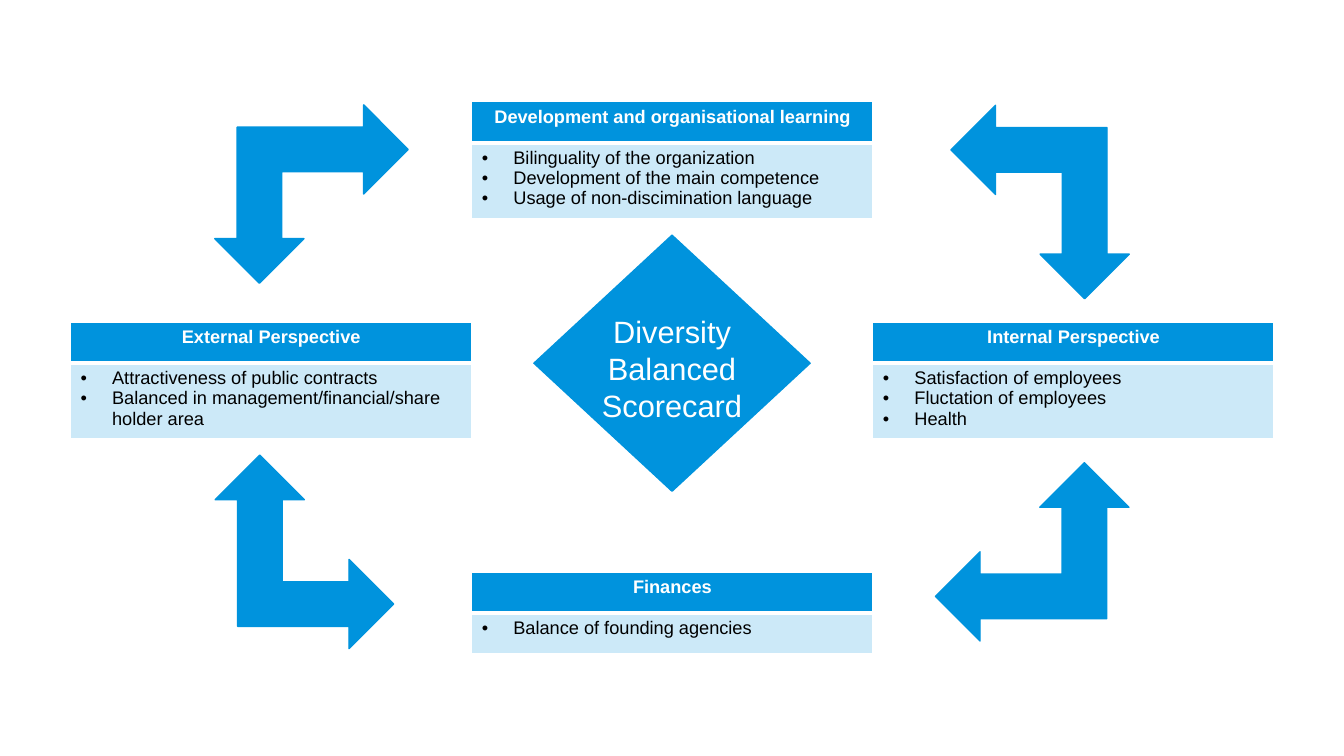
from lxml import etree
from pptx import Presentation
from pptx.dml.color import RGBColor
from pptx.enum.shapes import MSO_SHAPE as Shape
from pptx.enum.text import PP_ALIGN as Align
from pptx.oxml.ns import qn
from pptx.util import Pt

BLUE = RGBColor(0x00, 0x93, 0xDD)
WHITE = RGBColor(0xFF, 0xFF, 0xFF)
BLACK = RGBColor(0x00, 0x00, 0x00)
FONT = "Arial"

CARD_WIDTH, HEADER_HEIGHT = 286.5, 29.2
ARROW_WIDTH, ARROW_HEIGHT = 138.2, 127.4
INDENT = 22.5

# left, top, body height, heading, bullets
CARDS = [
    (337, 72.7, 54.3, "Development and organisational learning",
     ["Bilinguality of the organization", "Development of the main competence",
      "Usage of non-discimination language"]),
    (50.4, 230.1, 54.3, "External Perspective",
     ["Attractiveness of public contracts",
      "Balanced in management/financial/share holder area"]),
    (337, 408.7, HEADER_HEIGHT, "Finances", ["Balance of founding agencies"]),
    (623.5, 230.1, 54.3, "Internal Perspective",
     ["Satisfaction of employees", "Fluctation of employees", "Health"]),
]
# left, top, rotation
ARROWS = [(668.2, 330.5, 0), (673.9, 80.6, 270), (153.4, 74.9, 180), (148.3, 330.5, 90)]


def style_text(paragraph, size, color, bold=False):
    font = paragraph.font
    font.name, font.size, font.bold = FONT, Pt(size), bold
    font.color.rgb = color


def add_bullet(paragraph):
    properties = paragraph._p.get_or_add_pPr()
    properties.set("marL", str(Pt(INDENT)))
    properties.set("indent", str(-Pt(INDENT)))
    etree.SubElement(properties, qn("a:buFont")).set("typeface", FONT)
    etree.SubElement(properties, qn("a:buChar")).set("char", "•")


def style_cell(cell, borders, opacity=None):
    """Fill a cell blue and draw white borders: left, right, top, bottom."""
    cell.fill.solid()
    cell.fill.fore_color.rgb = BLUE
    properties = cell._tc.get_or_add_tcPr()
    if opacity is not None:
        color = properties.find(".//" + qn("a:srgbClr"))
        etree.SubElement(color, qn("a:alpha")).set("val", str(opacity * 1000))
    for index, (side, width) in enumerate(zip("LRTB", borders)):
        line = etree.Element(qn("a:ln" + side), w=str(Pt(width)))
        fill = etree.SubElement(line, qn("a:solidFill"))
        etree.SubElement(fill, qn("a:srgbClr")).set("val", str(WHITE))
        properties.insert(index, line)


def add_card(slide, left, top, body_height, heading, bullets):
    table = slide.shapes.add_table(2, 1, Pt(left), Pt(top), Pt(CARD_WIDTH),
                                   Pt(HEADER_HEIGHT + body_height)).table
    table.horz_banding = False
    table.rows[0].height = Pt(HEADER_HEIGHT)
    table.rows[1].height = Pt(body_height)
    header, body = table.cell(0, 0), table.cell(1, 0)
    style_cell(header, (1, 1, 1, 3))
    style_cell(body, (1, 1, 3, 1), opacity=20)

    header.text = heading
    title = header.text_frame.paragraphs[0]
    title.alignment = Align.CENTER
    style_text(title, 13, WHITE, bold=True)

    body.text = "\n".join(bullets)
    for paragraph in body.text_frame.paragraphs:
        add_bullet(paragraph)
        style_text(paragraph, 13, BLACK)


def add_blue_shape(slide, kind, left, top, width, height, rotation=0):
    shape = slide.shapes.add_shape(kind, Pt(left), Pt(top), Pt(width), Pt(height))
    shape.rotation = rotation
    shape.shadow.inherit = False
    shape.fill.solid()
    shape.fill.fore_color.rgb = BLUE
    shape.line.color.rgb = BLUE
    shape.line.width = Pt(1)


def add_center(slide, left, top, width, height):
    add_blue_shape(slide, Shape.DIAMOND, left, top, width, height)
    label_width, label_height = 139.7, 87.1
    label = slide.shapes.add_textbox(Pt(left + (width - label_width) / 2),
                                     Pt(top + (height - label_height) / 2 + 4),
                                     Pt(label_width), Pt(label_height))
    frame = label.text_frame
    frame.word_wrap = True
    frame.text = "Diversity Balanced Scorecard"
    frame.paragraphs[0].alignment = Align.CENTER
    style_text(frame.paragraphs[0], 22, WHITE)


def main():
    presentation = Presentation()
    presentation.slide_width, presentation.slide_height = Pt(960), Pt(540)
    slide = presentation.slides.add_slide(presentation.slide_layouts[6])

    # Central diamond
    add_center(slide, 381.4, 168, 197.3, 182.9)
    # Four perspectives
    for card in CARDS:
        add_card(slide, *card)
    # Corner arrows linking neighbouring perspectives
    for left, top, rotation in ARROWS:
        add_blue_shape(slide, Shape.LEFT_UP_ARROW, left, top,
                       ARROW_WIDTH, ARROW_HEIGHT, rotation)

    presentation.save("out.pptx")


if __name__ == "__main__":
    main()
